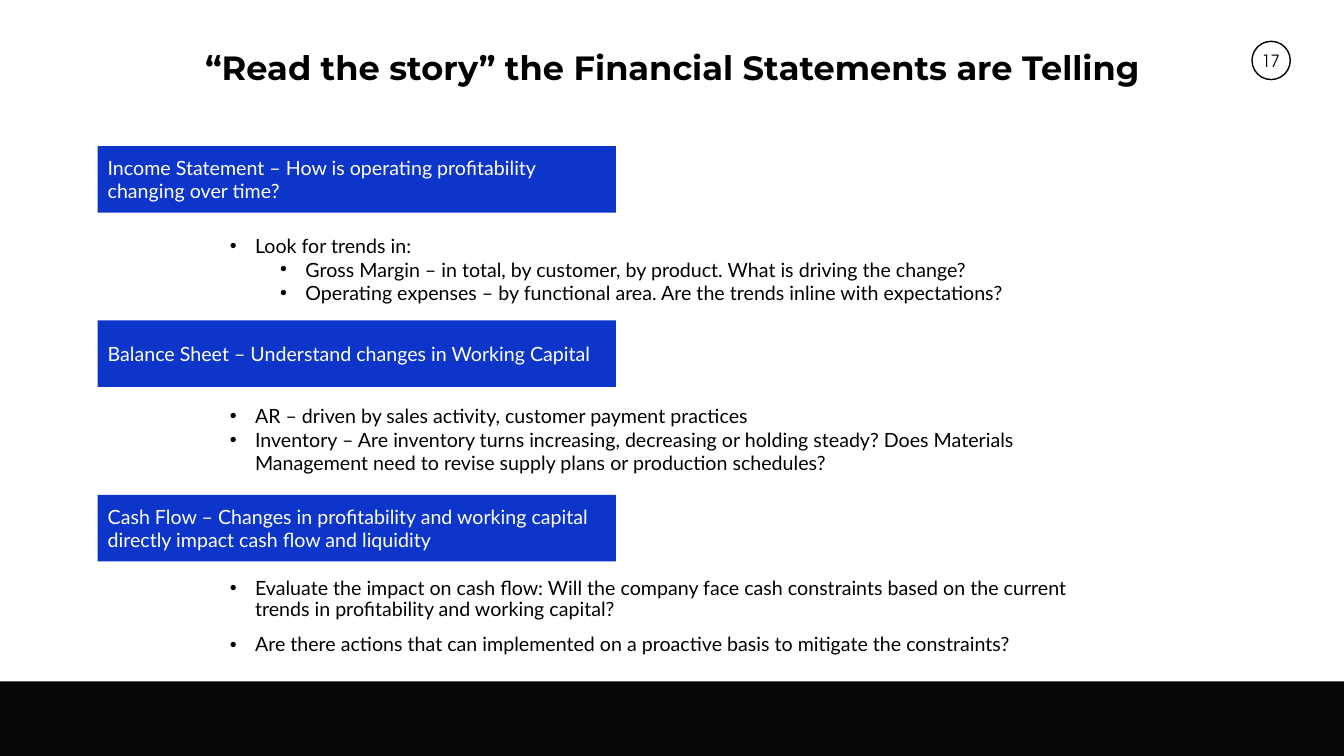
"""Build the slide on reading the story in the financial statements."""
from lxml import etree
from pptx import Presentation
from pptx.dml.color import RGBColor
from pptx.enum.shapes import MSO_SHAPE
from pptx.enum.text import MSO_ANCHOR, MSO_AUTO_SIZE, PP_ALIGN
from pptx.oxml.ns import qn
from pptx.util import Inches, Pt

TITLE = "“Read the story” the Financial Statements are Telling"
PAGE = "17"
PARTS = [
    dict(head="Income Statement – How is operating profitability changing over time?",
         slot=2, drop=8.2, rows=8.1, style={},
         items=[(0, "Look for trends in:"),
                (1, "Gross Margin – in total, by customer, by product. "
                    "What is driving the change?"),
                (1, "Operating expenses – by functional area. "
                    "Are the trends inline with expectations?")]),
    dict(head="Balance Sheet – Understand changes in Working Capital",
         slot=4, drop=7.8, rows=8.1, style={},
         items=[(0, "AR – driven by sales activity, customer payment practices"),
                (0, "Inventory – Are inventory turns increasing, decreasing or "
                    "holding steady? Does Materials Management need to revise "
                    "supply plans or production schedules?")]),
    dict(head="Cash Flow – Changes in profitability and working capital "
              "directly impact cash flow and liquidity",
         slot=1, drop=7.8, rows=9.8, style=dict(lead=0.9, gap=10),
         items=[(0, "Evaluate the impact on cash flow: Will the company face cash "
                    "constraints based on the current trends in profitability "
                    "and working capital?"),
                (0, "Are there actions that can implemented on a proactive basis "
                    "to mitigate the constraints?")]),
]
SPARE = 3

BLACK = RGBColor(0x00, 0x00, 0x00)
WHITE = RGBColor(0xFF, 0xFF, 0xFF)
BLUE = RGBColor(0x0E, 0x35, 0xCA)
INK = RGBColor(0x06, 0x08, 0x08)
RECT, OVAL = MSO_SHAPE.RECTANGLE, MSO_SHAPE.OVAL
TOP, MIDDLE = MSO_ANCHOR.TOP, MSO_ANCHOR.MIDDLE
LEFT, CENTER = PP_ALIGN.LEFT, PP_ALIGN.CENTER
FIXED = MSO_AUTO_SIZE.NONE

CELL = Inches(0.1)
COLS, ROWS = 133.33, 75
BAR_TOP, PITCH = 14.5, 17.3
INDENT, STEP = 2.5, 5


def grid(*cells):
    """Turn grid cells into lengths."""
    return [round(n * CELL) for n in cells]


def put(frame, items, size=14, face="Lato", color=BLACK, bold=False, align=LEFT,
        anchor=TOP, pad=(1, 0.5), lead=1.0, gap=0, bullet=False, wrap=True):
    """Write (level, text) items into a text frame."""
    frame.auto_size = FIXED
    frame.word_wrap = wrap
    frame.vertical_anchor = anchor
    frame.margin_left = frame.margin_right = grid(pad[0])[0]
    frame.margin_top = frame.margin_bottom = grid(pad[1])[0]
    for n, (level, text) in enumerate(items):
        para = frame.add_paragraph() if n else frame.paragraphs[0]
        if bullet:
            props = para._p.get_or_add_pPr()
            left, hang = grid(INDENT + level * STEP, -INDENT)
            props.set("marL", str(left))
            props.set("indent", str(hang))
            etree.SubElement(props, qn("a:buFont")).set("typeface", "Arial")
            etree.SubElement(props, qn("a:buChar")).set("char", "•")
        para.level = level
        para.alignment = align
        para.line_spacing = lead
        para.space_before = Pt(gap if n else 0)
        para.space_after = Pt(0)
        run = para.add_run()
        run.text = text
        font = run.font
        font.name, font.size, font.bold = face, Pt(size), bold
        font.color.rgb = color


def place(shape, *cells):
    """Move a placeholder to grid cells."""
    shape.left, shape.top, shape.width, shape.height = grid(*cells)


def draw(slide, kind, *cells, fill=None, line=None):
    """Add a flat preset shape."""
    shape = slide.shapes.add_shape(kind, *grid(*cells))
    shape.shadow.inherit = False
    if fill is None:
        shape.fill.background()
    else:
        shape.fill.solid()
        shape.fill.fore_color.rgb = fill
    if line is None:
        shape.line.fill.background()
    else:
        shape.line.color.rgb = line
        shape.line.width = Pt(1)
    return shape


def main():
    """Lay out the slide and save it."""
    deck = Presentation()
    deck.slide_width, deck.slide_height = grid(COLS, ROWS)
    slide = deck.slides.add_slide(deck.slide_layouts[4])
    slots = {s.placeholder_format.idx: s for s in slide.placeholders}

    draw(slide, OVAL, 124.2, 4.1, 3.8, 3.8, line=BLACK)
    page = slide.shapes.add_textbox(*grid(124, 4.5, 4.1, 3))
    put(page.text_frame, [(0, PAGE)], size=12, face="TeX Gyre Adventor",
        align=CENTER, wrap=False)
    draw(slide, RECT, 0, 67.6, COLS, ROWS - 67.6, fill=INK)

    place(slots[0], 9.2, 4, 115, 5.9)
    put(slots[0].text_frame, [(0, TITLE)], size=24, face="Montserrat", bold=True,
        align=CENTER, anchor=MIDDLE, pad=(2, 1), lead=0.9)

    for n, part in enumerate(PARTS):
        top = BAR_TOP + n * PITCH
        bar = draw(slide, RECT, 9.7, top, 51.4, 6.6, fill=BLUE)
        put(bar.text_frame, [(0, part["head"])], color=WHITE, anchor=MIDDLE)
        body = slots[part["slot"]]
        place(body, 21.8, top + part["drop"], 90.3, part["rows"])
        put(body.text_frame, part["items"], bullet=True, **part["style"])

    spare = slots[SPARE].element
    spare.getparent().remove(spare)
    deck.save("out.pptx")


if __name__ == "__main__":
    main()
